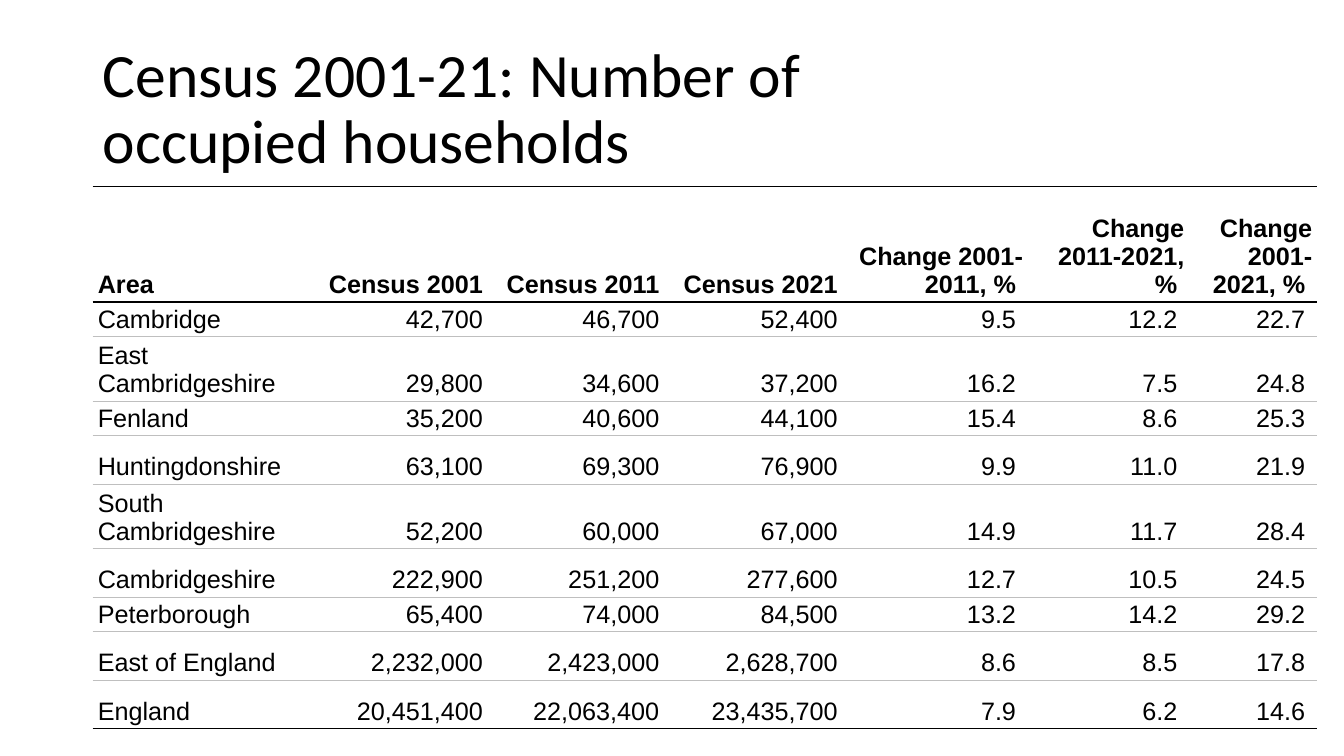
"""Build the slide on occupied households in the 2001, 2011 and 2021 censuses."""
from dataclasses import dataclass

from lxml.etree import SubElement
from pptx import Presentation
from pptx.dml.color import RGBColor
from pptx.enum.text import MSO_ANCHOR, PP_ALIGN
from pptx.oxml.ns import qn
from pptx.util import Pt

COLORS = {"ink": "000000", "rule": "BFBFBF", "paper": "FFFFFF"}
NO_STYLE = "{2D5ABB26-0587-4C30-8999-92F81FD0307C}"
NO_BREAK_SPACE = chr(160)
LEFT, TABLE_TOP = 66.24, 133.2
SINGLE, SPACED, DOUBLE, HEADER = 24.5, 34.8, 46.1, 82.6
COLUMN_WIDTHS = (161.3, 126, 126, 127.4, 127.4, 115.2, 91.4)


@dataclass(frozen=True)
class Row:
    height: float
    texts: tuple[str, ...]


@dataclass(frozen=True)
class Border:
    color: str
    width: float


STRONG = Border("ink", 1)
FAINT = Border("rule", 0.43)

ROWS = (
    Row(HEADER, ("Area", "Census 2001", "Census 2011", "Census 2021",
                 "Change 2001-2011, %", "Change 2011-2021, %", "Change 2001-2021, %")),
    Row(SINGLE, ("Cambridge", "42,700", "46,700", "52,400", "9.5", "12.2", "22.7")),
    Row(DOUBLE, ("East Cambridgeshire", "29,800", "34,600", "37,200", "16.2", "7.5", "24.8")),
    Row(SINGLE, ("Fenland", "35,200", "40,600", "44,100", "15.4", "8.6", "25.3")),
    Row(SPACED, ("Huntingdonshire", "63,100", "69,300", "76,900", "9.9", "11.0", "21.9")),
    Row(DOUBLE, ("South Cambridgeshire", "52,200", "60,000", "67,000", "14.9", "11.7", "28.4")),
    Row(SPACED, ("Cambridgeshire", "222,900", "251,200", "277,600", "12.7", "10.5", "24.5")),
    Row(SINGLE, ("Peterborough", "65,400", "74,000", "84,500", "13.2", "14.2", "29.2")),
    Row(SPACED, ("East of England", "2,232,000", "2,423,000", "2,628,700", "8.6", "8.5", "17.8")),
    Row(SPACED, ("England", "20,451,400", "22,063,400", "23,435,700", "7.9", "6.2", "14.6")),
)


def color(name: str) -> RGBColor:
    return RGBColor.from_string(COLORS[name])


def set_font(paragraph, name: str, size: float, bold: bool = False) -> None:
    font = paragraph.font
    font.name, font.size, font.bold = name, Pt(size), bold
    font.color.rgb = color("ink")


def add_title(page, text: str) -> None:
    box = page.shapes.add_textbox(Pt(LEFT), Pt(24.48), Pt(545.76), Pt(108.72))
    frame = box.text_frame
    frame.word_wrap = True
    frame.vertical_anchor = MSO_ANCHOR.MIDDLE
    paragraph = frame.paragraphs[0]
    paragraph.text = text
    paragraph.line_spacing = 0.9
    set_font(paragraph, "Calibri", 44)


def set_borders(cell, top: Border, bottom: Border) -> None:
    properties = cell._tc.get_or_add_tcPr()
    sides = (("a:lnL", None), ("a:lnR", None), ("a:lnT", top), ("a:lnB", bottom))
    for position, (tag, border) in enumerate(sides):
        line = SubElement(properties, qn(tag))
        if border is None:
            SubElement(line, qn("a:noFill"))
        else:
            line.set("w", str(int(Pt(border.width))))
            fill = SubElement(line, qn("a:solidFill"))
            SubElement(fill, qn("a:srgbClr")).set("val", COLORS[border.color])
        properties.insert(position, line)


def fill_cell(cell, text: str, is_header: bool, is_label: bool) -> None:
    cell.fill.solid()
    cell.fill.fore_color.rgb = color("paper")
    cell.vertical_anchor = MSO_ANCHOR.BOTTOM
    cell.margin_left = cell.margin_right = Pt(3.6)
    cell.margin_top = cell.margin_bottom = Pt(2)
    paragraph = cell.text_frame.paragraphs[0]
    paragraph.text = text + NO_BREAK_SPACE
    paragraph.alignment = PP_ALIGN.LEFT if is_label else PP_ALIGN.RIGHT
    set_font(paragraph, "Arial", 18, is_header)


def add_household_table(page) -> None:
    frame = page.shapes.add_table(
        len(ROWS), len(COLUMN_WIDTHS), Pt(LEFT), Pt(TABLE_TOP),
        Pt(sum(COLUMN_WIDTHS)), Pt(sum(row.height for row in ROWS)))
    table = frame.table
    table.first_row = table.horz_banding = False
    table._tbl.tblPr.find(qn("a:tableStyleId")).text = NO_STYLE
    for column, width in zip(table.columns, COLUMN_WIDTHS):
        column.width = Pt(width)
    edges = [STRONG, STRONG] + [FAINT] * (len(ROWS) - 2) + [STRONG]
    for row_index, row in enumerate(ROWS):
        table.rows[row_index].height = Pt(row.height)
        for column_index, text in enumerate(row.texts):
            cell = table.cell(row_index, column_index)
            fill_cell(cell, text, row_index == 0, column_index == 0)
            set_borders(cell, edges[row_index], edges[row_index + 1])


def main() -> None:
    deck = Presentation()
    deck.slide_width, deck.slide_height = Pt(960), Pt(540)
    page = deck.slides.add_slide(deck.slide_layouts[6])
    add_household_table(page)
    add_title(page, "Census 2001-21: Number of occupied households")
    deck.save("out.pptx")


if __name__ == "__main__":
    main()
